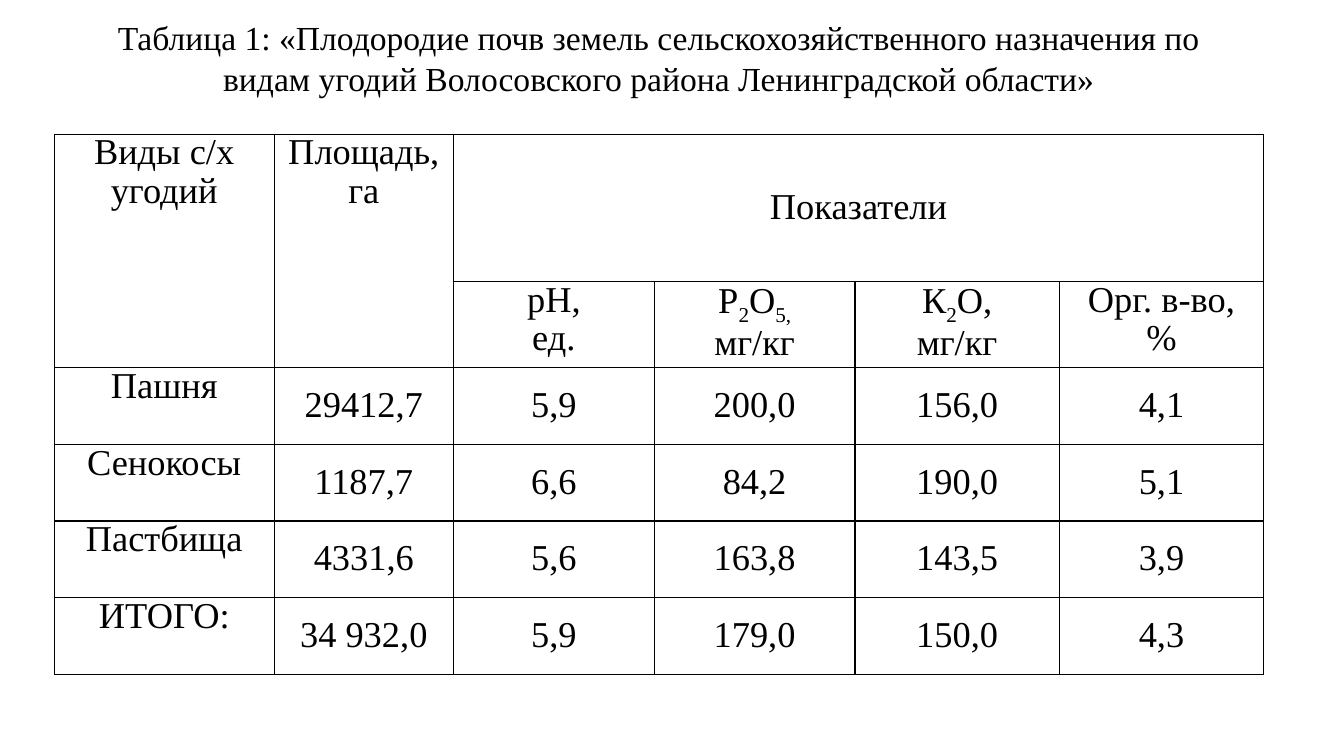
"""Build a slide with a table of soil fertility by farmland type."""
from lxml.etree import SubElement
from pptx import Presentation
from pptx.dml.color import RGBColor
from pptx.enum.text import MSO_ANCHOR as Anchor, PP_ALIGN as Align
from pptx.oxml.ns import qn
from pptx.util import Cm, Pt

COLORS = {"ink": "000000"}
FONT = "Times New Roman"
TITLE = ("Таблица 1: «Плодородие почв земель сельскохозяйственного назначения "
         "по видам угодий Волосовского района Ленинградской области»")
SUBSCRIPTS = {"2", "5,"}
HEADINGS = [
    (0, 0, 1, 0, [["Виды с/х угодий"]]),
    (0, 1, 1, 1, [["Площадь, га"]]),
    (0, 2, 0, 5, [["Показатели"]]),
    (1, 2, 1, 2, [["рН,"], ["ед."]]),
    (1, 3, 1, 3, [["Р", "2", "О", "5,"], ["мг/кг"]]),
    (1, 4, 1, 4, [["К", "2", "О,"], ["мг/кг"]]),
    (1, 5, 1, 5, [["Орг. в-во,"], ["%"]]),
]
LAND = [
    ("Пашня", "29412,7", "5,9", "200,0", "156,0", "4,1"),
    ("Сенокосы", "1187,7", "6,6", "84,2", "190,0", "5,1"),
    ("Пастбища", "4331,6", "5,6", "163,8", "143,5", "3,9"),
    ("ИТОГО:", "34 932,0", "5,9", "179,0", "150,0", "4,3"),
]
COLUMN_WIDTHS = [5.54, 4.52, 5.06, 5.06, 5.15, 5.15]
ROW_HEIGHTS = [3.71, 2.18] + [1.93] * len(LAND)


def style(para, size):
    para.alignment = Align.CENTER
    para.font.name = FONT
    para.font.size = Pt(size)
    para.font.color.rgb = RGBColor.from_string(COLORS["ink"])


def add_borders(cell):
    properties = cell._tc.get_or_add_tcPr()
    for position, side in enumerate(("lnL", "lnR", "lnT", "lnB")):
        line = properties.makeelement(qn(f"a:{side}"), {"w": str(Pt(1))})
        fill = SubElement(line, qn("a:solidFill"))
        SubElement(fill, qn("a:srgbClr"), val=COLORS["ink"])
        properties.insert(position, line)


def write_cell(cell, lines, anchor):
    cell.vertical_anchor = anchor
    frame = cell.text_frame
    for index, pieces in enumerate(lines):
        para = frame.add_paragraph() if index else frame.paragraphs[0]
        style(para, 26)
        para.line_spacing = 0.95
        for piece in pieces:
            span = para.add_run()
            span.text = piece
            if len(pieces) > 1 and piece in SUBSCRIPTS:
                span.font._element.set("baseline", "-25000")


def add_title(page):
    title = page.shapes.title
    title.left, title.top, title.width, title.height = Cm(2), Cm(0.25), Cm(29.2), Cm(3.07)
    frame = title.text_frame
    frame.text = TITLE
    frame.word_wrap = True
    frame.vertical_anchor = Anchor.MIDDLE
    frame.margin_bottom = Cm(0.79)
    style(frame.paragraphs[0], 24)


def add_land_table(page):
    table = page.shapes.add_table(
        len(ROW_HEIGHTS), len(COLUMN_WIDTHS), Cm(1.37), Cm(3.38),
        Cm(sum(COLUMN_WIDTHS)), Cm(sum(ROW_HEIGHTS))).table
    table.first_row = table.horz_banding = False
    for column, width in zip(table.columns, COLUMN_WIDTHS):
        column.width = Cm(width)
    for row, height in zip(table.rows, ROW_HEIGHTS):
        row.height = Cm(height)
    for cell in table.iter_cells():
        cell.fill.background()
        cell.margin_left = cell.margin_right = Cm(0.18)
        cell.margin_top = cell.margin_bottom = 0
        add_borders(cell)
    for top, left, bottom, right, lines in HEADINGS:
        cell = table.cell(top, left)
        if (top, left) != (bottom, right):
            cell.merge(table.cell(bottom, right))
        write_cell(cell, lines, Anchor.MIDDLE if right > left else Anchor.TOP)
    for row, values in enumerate(LAND, start=2):
        for column, value in enumerate(values):
            anchor = Anchor.MIDDLE if column else Anchor.TOP
            write_cell(table.cell(row, column), [[value]], anchor)


def main():
    deck = Presentation()
    deck.slide_width, deck.slide_height = Cm(33.87), Cm(19.05)
    page = deck.slides.add_slide(deck.slide_layouts[5])
    add_land_table(page)
    add_title(page)
    deck.save("out.pptx")


if __name__ == "__main__":
    main()
